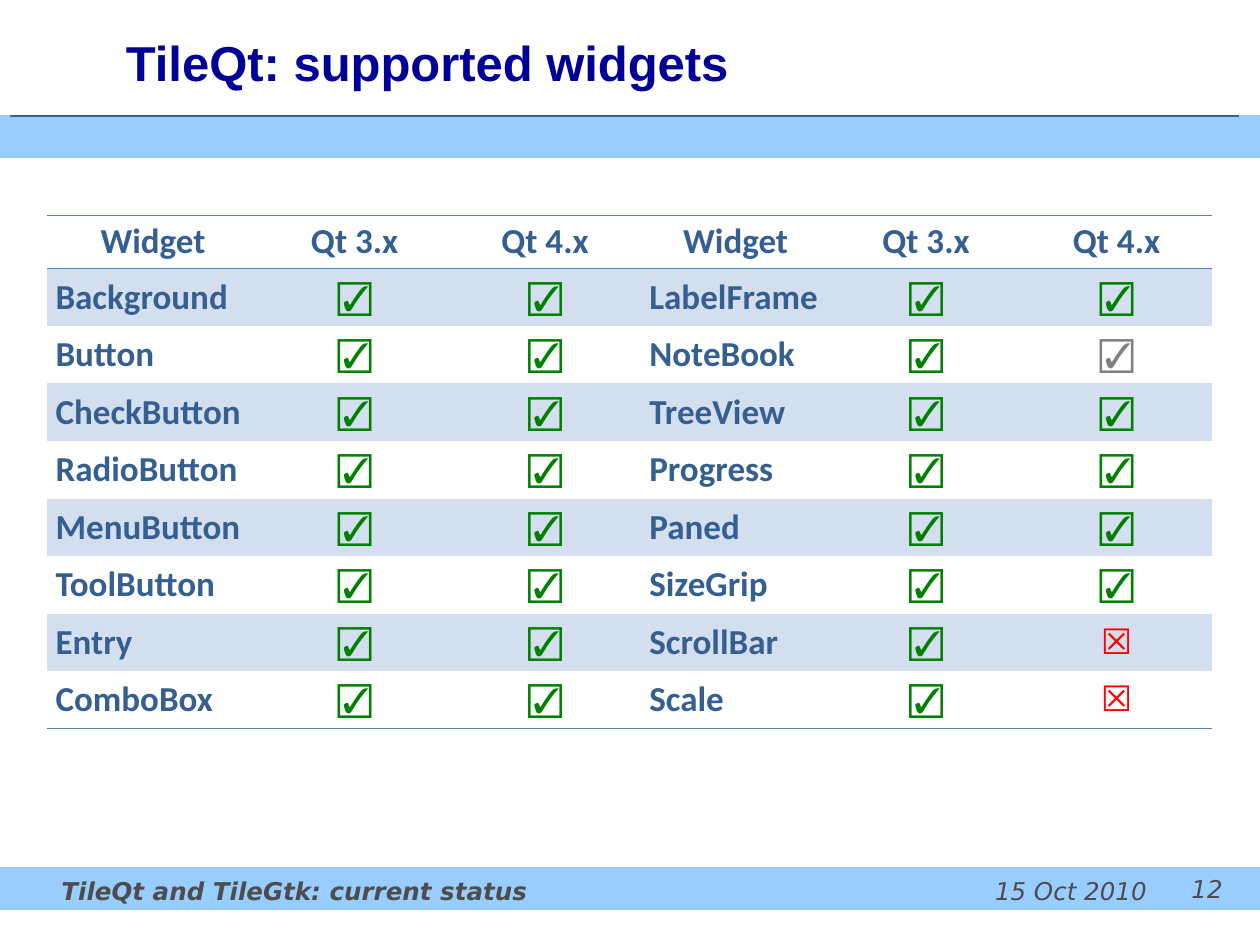
from lxml import etree
from pptx import Presentation, util as u
from pptx.dml.color import RGBColor
from pptx.enum import shapes, text
from pptx.oxml.ns import qn

BAND_BLUE = "99CCFF"
RULE_BLUE = "4F81BD"
LABEL_BLUE = "365F91"
FOOTER_GREY = "4D4D4D"
HEADINGS = ("Widget", "Qt 3.x", "Qt 4.x")
MARK_COLOURS = {"yes": ("☑", "008000"), "partial": ("☑", "808080"), "no": ("☒", "FF0000")}
LEFT_WIDGETS = ("Background", "Button", "CheckButton", "RadioButton",
                "MenuButton", "ToolButton", "Entry", "ComboBox")
RIGHT_WIDGETS = ("LabelFrame", "NoteBook", "TreeView", "Progress",
                 "Paned", "SizeGrip", "ScrollBar", "Scale")
RIGHT_QT4 = {"NoteBook": "partial", "ScrollBar": "no", "Scale": "no"}


def colour(value):
    return RGBColor.from_string(value)


def add_run(paragraph, wording, font_name, size, ink, bold=False, italic=False):
    run = paragraph.add_run()
    run.text = wording
    run.font.name = font_name
    run.font.size = u.Pt(size)
    run.font.bold = bold
    run.font.italic = italic
    run.font.color.rgb = colour(ink)


def add_band(slide, top):
    band = slide.shapes.add_shape(shapes.MSO_SHAPE.RECTANGLE, 0, u.Cm(top), u.Cm(25.4), u.Cm(0.84))
    band.shadow.inherit = False
    band.fill.solid()
    band.fill.fore_color.rgb = colour(BAND_BLUE)
    band.line.color.rgb = colour(BAND_BLUE)
    band.line.width = u.Pt(0.75)


def add_rule(slide):
    rule = slide.shapes.add_connector(shapes.MSO_CONNECTOR.STRAIGHT,
                                      u.Cm(24.97), u.Cm(2.34), u.Cm(0.2), u.Cm(2.34))
    rule.line.color.rgb = colour("336699")
    rule.line.width = u.Pt(0.75)
    etree.SubElement(rule._element.spPr, qn("a:effectLst"))


def add_text(slide, box, wording, font_name, size, ink, align="LEFT", anchor="TOP", **style):
    label = slide.shapes.add_textbox(*(u.Cm(length) for length in box))
    frame = label.text_frame
    frame.word_wrap = True
    frame.vertical_anchor = getattr(text.MSO_ANCHOR, anchor)
    paragraph = frame.paragraphs[0]
    paragraph.alignment = getattr(text.PP_ALIGN, align)
    add_run(paragraph, wording, font_name, size, ink, **style)


def set_borders(cell, ruled_edges):
    properties = cell._tc.get_or_add_tcPr()
    for position, edge in enumerate("LRTB"):
        border = etree.Element(qn(f"a:ln{edge}"))
        if edge in ruled_edges:
            border.set("w", str(u.Pt(1)))
            fill = etree.SubElement(border, qn("a:solidFill"))
            etree.SubElement(fill, qn("a:srgbClr"), val=RULE_BLUE)
        else:
            etree.SubElement(border, qn("a:noFill"))
        properties.insert(position, border)


def fill_cell(cell, wording, ink, bold, centred, shaded, ruled_edges):
    cell.margin_left = cell.margin_right = u.Cm(0.18)
    cell.margin_top = cell.margin_bottom = 0
    cell.vertical_anchor = text.MSO_ANCHOR.MIDDLE
    if shaded:
        cell.fill.solid()
        cell.fill.fore_color.rgb = colour("D3DFEE")
    else:
        cell.fill.background()
    set_borders(cell, ruled_edges)
    paragraph = cell.text_frame.paragraphs[0]
    paragraph.alignment = text.PP_ALIGN.CENTER if centred else text.PP_ALIGN.LEFT
    add_run(paragraph, wording, "Calibri", 20, ink, bold)


def add_support_table(slide):
    widths = [4.29] + [3.84] * 5
    heights = [1.07] + [1.16] * len(LEFT_WIDGETS)
    support = slide.shapes.add_table(len(heights), len(widths), u.Cm(0.94), u.Cm(4.34),
                                     u.Cm(sum(widths)), u.Cm(sum(heights))).table
    support.first_row = support.horz_banding = False
    for column, width in zip(support.columns, widths):
        column.width = u.Cm(width)
    for row, height in zip(support.rows, heights):
        row.height = u.Cm(height)

    for column, heading in enumerate(HEADINGS * 2):
        fill_cell(support.cell(0, column), heading, LABEL_BLUE, True, True, False, "TB")

    ruled_rows = {1: "T", len(LEFT_WIDGETS): "B"}
    for row, (left, right) in enumerate(zip(LEFT_WIDGETS, RIGHT_WIDGETS), start=1):
        entries = (left, "yes", "yes", right, "yes", RIGHT_QT4.get(right, "yes"))
        for column, entry in enumerate(entries):
            is_mark = entry in MARK_COLOURS
            wording, ink = MARK_COLOURS.get(entry, (entry, LABEL_BLUE))
            fill_cell(support.cell(row, column), wording, ink, not is_mark, is_mark,
                      row % 2 == 1, ruled_rows.get(row, ""))


def add_footer(slide):
    style = ("DejaVu Sans", 14, FOOTER_GREY)
    add_text(slide, (19.69, 17.53, 3.68, 0.84), "15 Oct 2010", *style, align="RIGHT", italic=True)
    add_text(slide, (0.99, 17.53, 19.15, 0.84), "TileQt and TileGtk: current status",
             *style, bold=True, italic=True)
    add_text(slide, (23.7, 17.5, 1.27, 0.84), "12", *style, align="CENTER", italic=True)


def main():
    deck = Presentation()
    deck.slide_width, deck.slide_height = u.Cm(25.4), u.Cm(19.05)
    slide = deck.slides.add_slide(deck.slide_layouts[6])
    for top in (17.5, 2.34):
        add_band(slide, top)
    add_rule(slide)
    add_text(slide, (2.29, 0.2, 22.68, 2.11), "TileQt: supported widgets",
             "Arial", 28, "000099", anchor="MIDDLE", bold=True)
    add_support_table(slide)
    add_footer(slide)
    deck.save("out.pptx")


if __name__ == "__main__":
    main()
